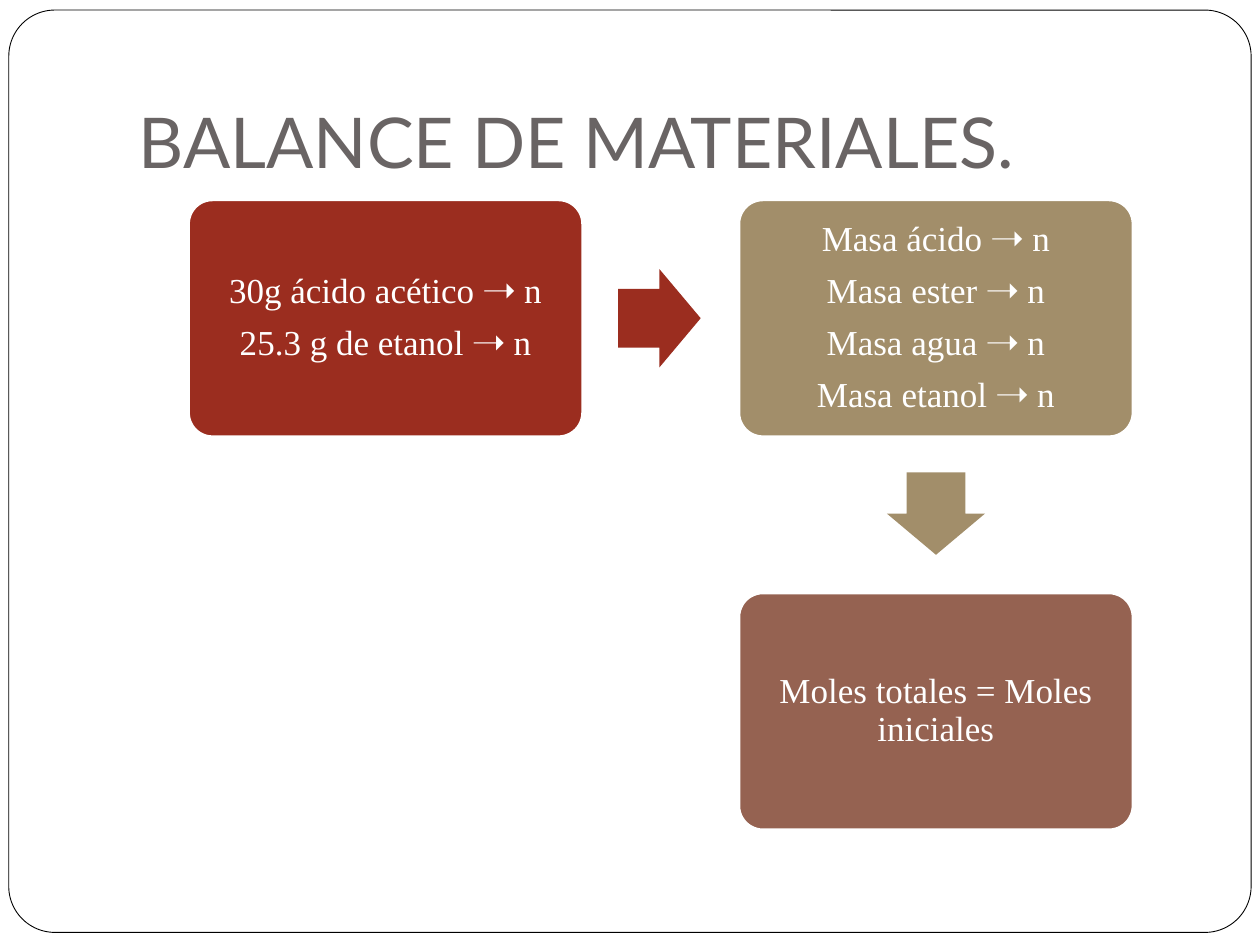
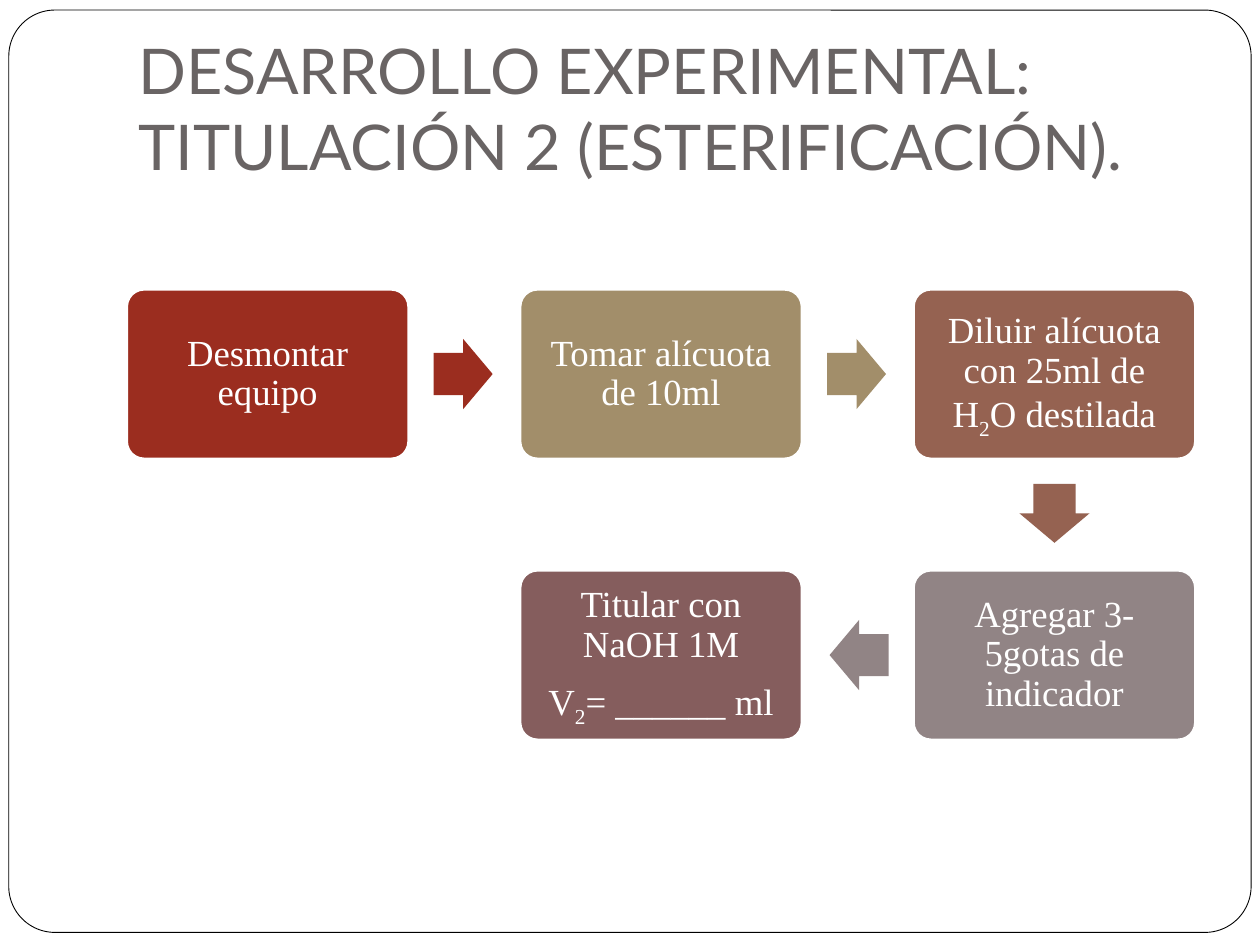
from math import atan2, degrees

from pptx import Presentation
from pptx.dml.color import RGBColor
from pptx.enum.shapes import MSO_SHAPE
from pptx.enum.text import MSO_ANCHOR, MSO_AUTO_SIZE, PP_ALIGN
from pptx.util import Inches, Pt

WHITE = RGBColor(0xFF, 0xFF, 0xFF)
BLACK = RGBColor(0x00, 0x00, 0x00)
GRAY = RGBColor(0x69, 0x64, 0x64)
RED = RGBColor(0x9B, 0x2D, 0x1F)
SAND = RGBColor(0xA2, 0x8E, 0x6A)
BROWN = RGBColor(0x95, 0x62, 0x51)
STONE = RGBColor(0x91, 0x84, 0x85)
PLUM = RGBColor(0x85, 0x5D, 0x5D)
COLORS = [RED, SAND, BROWN, STONE, PLUM]

# Each step is (column, row, lines); a part between tildes is a subscript.
SLIDES = [
    {
        "title": "BALANCE DE MATERIALES.", "title_size": 40,
        "left": 1.5, "top": 1.59, "width": 3.12, "size": 20, "inset": 0.14,
        "steps": [
            (0, 0, ["30g ácido acético ➝ n", "25.3 g de etanol ➝ n"]),
            (1, 0, ["Masa ácido ➝ n", "Masa ester ➝ n",
                    "Masa agua ➝ n", "Masa etanol ➝ n"]),
            (1, 1, ["Moles totales = Moles iniciales"]),
        ],
    },
    {
        "title": "DESARROLLO EXPERIMENTAL: TITULACIÓN 2 (ESTERIFICACIÓN).",
        "title_size": 36,
        "left": 1.01, "top": 2.3, "width": 2.23, "size": 21, "inset": 0.13,
        "steps": [
            (0, 0, ["Desmontar equipo"]),
            (1, 0, ["Tomar alícuota de 10ml"]),
            (2, 0, ["Diluir alícuota con 25ml de H~2~O destilada"]),
            (2, 1, ["Agregar 3-5gotas de indicador"]),
            (1, 1, ["Titular con NaOH 1M", "V~2~= ______ ml"]),
        ],
    },
]


def add_block(slide, kind, box, fill, line=None, weight=1):
    shape = slide.shapes.add_shape(kind, *[Inches(n) for n in box])
    shape.shadow.inherit = False
    shape.fill.solid()
    shape.fill.fore_color.rgb = fill
    if line is None:
        shape.line.fill.background()
    else:
        shape.line.color.rgb = line
        shape.line.width = Pt(weight)
    return shape


def write_lines(frame, lines, size):
    """Fill a frame with centred lines, lowering the parts between tildes."""
    for i, text in enumerate(lines):
        para = frame.paragraphs[0] if i == 0 else frame.add_paragraph()
        para.alignment = PP_ALIGN.CENTER
        para.line_spacing = 0.9
        para.space_after = Pt(8)
        for j, part in enumerate(text.split("~")):
            run = para.add_run()
            run.text = part
            run.font.name = "Times New Roman"
            run.font.size = Pt(size)
            run.font.color.rgb = WHITE
            if j % 2:
                run.font._element.set("baseline", "-25000")


prs = Presentation()
prs.slide_width = Inches(10)
prs.slide_height = Inches(7.5)
layout = prs.slide_layouts[5]

# Title place and style, shared through the layout
head = layout.placeholders[0]
head.left, head.top = Inches(1), Inches(0.3)
head.width, head.height = Inches(8.5), Inches(1.25)
frame = head.text_frame
frame.auto_size = MSO_AUTO_SIZE.NONE
frame.vertical_anchor = MSO_ANCHOR.BOTTOM
frame.margin_left = frame.margin_right = frame.margin_bottom = Inches(0.1)
frame.margin_top = Inches(0.05)

for number, data in enumerate(SLIDES):
    slide = prs.slides.add_slide(layout)
    if number == 0:
        # The rounded border moves to the layout, behind every slide
        border = add_block(slide, MSO_SHAPE.ROUNDED_RECTANGLE,
                           (0.07, 0.08, 9.86, 7.32), WHITE, BLACK, 0.5)
        border.adjustments[0] = 0.05
        head.element.getparent().insert(2, border.element)

    title = slide.shapes.title
    title.text_frame.text = data["title"]
    para = title.text_frame.paragraphs[0]
    para.alignment = PP_ALIGN.LEFT
    font = para.runs[0].font
    font.name = "Lato"
    font.size = Pt(data["title_size"])
    font.color.rgb = GRAY

    # Every measure of the flow follows from the box width
    wide = data["width"]
    high = 0.6 * wide
    long, thick = 0.21 * wide, 0.25 * wide
    steps = data["steps"]
    spots = [(data["left"] + 1.4 * wide * col, data["top"] + wide * row)
             for col, row, lines in steps]

    for i, (col, row, lines) in enumerate(steps):
        x, y = spots[i]
        box = add_block(slide, MSO_SHAPE.ROUNDED_RECTANGLE,
                        (x, y, wide, high), COLORS[i], WHITE)
        box.adjustments[0] = 0.1
        frame = box.text_frame
        frame.word_wrap = True
        frame.vertical_anchor = MSO_ANCHOR.MIDDLE
        frame.margin_left = frame.margin_right = Inches(data["inset"])
        frame.margin_top = frame.margin_bottom = Inches(data["inset"])
        write_lines(frame, lines, data["size"])

        if i + 1 < len(steps):
            # The arrow sits midway to the next box, a little nearer this one
            dx, dy = steps[i + 1][0] - col, steps[i + 1][1] - row
            next_x, next_y = spots[i + 1]
            mid_x = (x + next_x + wide) / 2 - 0.01 * dx
            mid_y = (y + next_y + high) / 2 - 0.01 * dy
            arrow = add_block(slide, MSO_SHAPE.RIGHT_ARROW,
                              (mid_x - long / 2, mid_y - thick / 2, long, thick),
                              COLORS[i])
            arrow.adjustments[0] = 0.6
            arrow.adjustments[1] = 0.5
            arrow.rotation = degrees(atan2(dy, dx))

prs.save("out.pptx")
